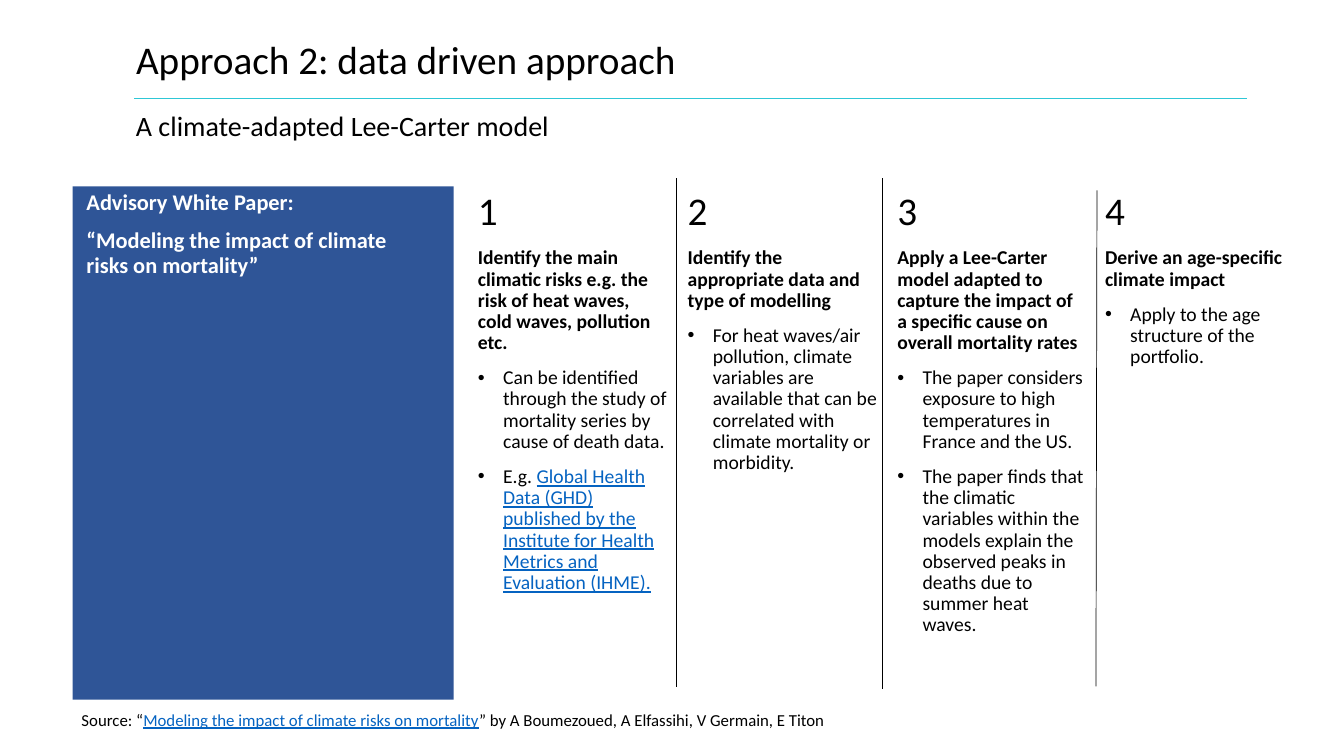
from dataclasses import dataclass

from lxml.etree import SubElement
from pptx import Presentation
from pptx.dml.color import RGBColor
from pptx.enum.shapes import MSO_CONNECTOR as Connector, MSO_SHAPE as Preset
from pptx.enum.text import MSO_ANCHOR as Anchor, MSO_AUTO_SIZE as AutoSize, PP_ALIGN as Align
from pptx.oxml.ns import qn
from pptx.util import Inches, Pt


@dataclass(frozen=True)
class Theme:
    font: str = "Calibri"
    text: str = "000000"
    inverse: str = "FFFFFF"
    panel: str = "2F5597"
    rule: str = "2EC7D6"
    link: str = "0563C1"
    title: int = 28
    subtitle: int = 20
    panel_size: int = 16
    body: int = 14
    source: int = 12


THEME = Theme()
SLIDE_SIZE = (13.33, 7.5)
COLUMN_TOP, COLUMN_HEIGHT = 1.85, 5.0
COLUMN_SPANS = [(4.64, 2.08), (6.72, 2.08), (8.8, 2.08), (10.86, 2.0)]
DIVIDERS = [(6.71, 1.77, 6.71, 6.82), (8.75, 1.77, 8.75, 6.84), (10.88, 1.89, 10.87, 6.81)]

# Each step: heading, then bullets made of (text, is link) pieces
STEPS = [
    ("Identify the main climatic risks e.g. the risk of heat waves, cold waves, pollution etc.",
     [[("Can be identified through the study of mortality series by cause of death data.", False)],
      [("E.g. ", False),
       ("Global Health Data (GHD) published by the Institute for Health Metrics "
        "and Evaluation (IHME).", True)]]),
    ("Identify the appropriate data and type of modelling",
     [[("For heat waves/air pollution, climate variables are available that can be "
        "correlated with climate mortality or morbidity.", False)]]),
    ("Apply a Lee-Carter model adapted to capture the impact of a specific cause on "
     "overall mortality rates",
     [[("The paper considers exposure to high temperatures in France and the US.", False)],
      [("The paper finds that the climatic variables within the models explain the "
        "observed peaks in deaths due to summer heat waves.", False)]]),
    ("Derive an age-specific climate impact",
     [[("Apply to the age structure of the portfolio.", False)]]),
]


def place(shape, box):
    for name, value in zip(("left", "top", "width", "height"), box):
        setattr(shape, name, Inches(value))


def prepare_frame(shape):
    frame = shape.text_frame
    settings = {"word_wrap": True, "auto_size": AutoSize.NONE, "vertical_anchor": Anchor.TOP}
    for name, value in settings.items():
        setattr(frame, name, value)
    return frame


def write_paragraph(frame, pieces, size, color=THEME.text, bold=False, bullet=False):
    first = not frame.paragraphs[0].runs
    para = frame.paragraphs[0] if first else frame.add_paragraph()
    # Indent and bullet
    properties = para._p.get_or_add_pPr()
    indent = Inches(0.25) if bullet else 0
    properties.set("marL", str(indent))
    properties.set("indent", str(-indent))
    if bullet:
        SubElement(properties, qn("a:buFont"), typeface="Arial")
        SubElement(properties, qn("a:buChar"), char="•")
    else:
        SubElement(properties, qn("a:buNone"))
    layout = {"alignment": Align.LEFT, "line_spacing": 0.9,
              "space_before": Pt(0 if first else 10), "space_after": Pt(0)}
    for name, value in layout.items():
        setattr(para, name, value)
    # Runs
    for text, is_link in pieces:
        span = para.add_run()
        span.text = text
        style = {"name": THEME.font, "size": Pt(size), "bold": bold, "underline": is_link}
        for name, value in style.items():
            setattr(span.font, name, value)
        span.font.color.rgb = RGBColor.from_string(THEME.link if is_link else color)


def add_line(page, ends, color):
    line = page.shapes.add_connector(Connector.STRAIGHT, *map(Inches, ends))
    line.line.color.rgb = RGBColor.from_string(color)
    line.line.width = Pt(0.5)
    SubElement(line._element.spPr, qn("a:effectLst"))


def add_header(page, box):
    left, top, width, height = box
    title = page.shapes.title
    place(title, box)
    write_paragraph(prepare_frame(title), [("Approach 2: data driven approach", False)], THEME.title)
    subtitle = page.shapes.add_textbox(0, 0, 0, 0)
    place(subtitle, (left, top + 0.72, width, 0.54))
    write_paragraph(prepare_frame(subtitle), [("A climate-adapted Lee-Carter model", False)],
                    THEME.subtitle)
    add_line(page, (left + 0.08, top + 0.63, left + width, top + 0.63), THEME.rule)


def add_paper_panel(page, box):
    left, top, width, height = box
    panel = page.shapes.add_shape(Preset.RECTANGLE, *map(Inches, box))
    panel.shadow.inherit = False
    panel.fill.solid()
    panel.fill.fore_color.rgb = RGBColor.from_string(THEME.panel)
    panel.line.fill.background()
    label = page.shapes.add_textbox(0, 0, 0, 0)
    place(label, (left + 0.04, top, width - 0.18, 1.18))
    frame = prepare_frame(label)
    for text in ("Advisory White Paper:", "“Modeling the impact of climate risks on mortality”"):
        write_paragraph(frame, [(text, False)], THEME.panel_size, THEME.inverse, bold=True)


def fill_step(holder, box, number, heading, bullets):
    place(holder, box)
    frame = prepare_frame(holder)
    write_paragraph(frame, [(str(number), False)], THEME.title)
    write_paragraph(frame, [(heading, False)], THEME.body, bold=True)
    for pieces in bullets:
        write_paragraph(frame, pieces, THEME.body, bullet=True)


def add_source(page, box):
    source = page.shapes.add_textbox(0, 0, 0, 0)
    place(source, box)
    pieces = [("Source: “", False),
              ("Modeling the impact of climate risks on mortality", True),
              ("” by A Boumezoued, A Elfassihi, V Germain, E Titon", False)]
    write_paragraph(prepare_frame(source), pieces, THEME.source)


def main():
    deck = Presentation()
    deck.slide_width, deck.slide_height = map(Inches, SLIDE_SIZE)
    # The comparison layout has a title and four body placeholders
    page = deck.slides.add_slide(deck.slide_layouts[4])
    holders = [holder for holder in page.placeholders if holder.placeholder_format.idx in (1, 2, 3, 4)]

    add_header(page, (1.25, 0.35, 11.12, 0.78))
    add_paper_panel(page, (0.72, 1.85, 3.78, 5.09))
    for number, (holder, (left, width), step) in enumerate(zip(holders, COLUMN_SPANS, STEPS), 1):
        fill_step(holder, (left, COLUMN_TOP, width, COLUMN_HEIGHT), number, *step)
    for ends in DIVIDERS:
        add_line(page, ends, THEME.text)
    add_source(page, (0.71, 7.01, 11.71, 0.27))
    deck.save("out.pptx")


if __name__ == "__main__":
    main()
